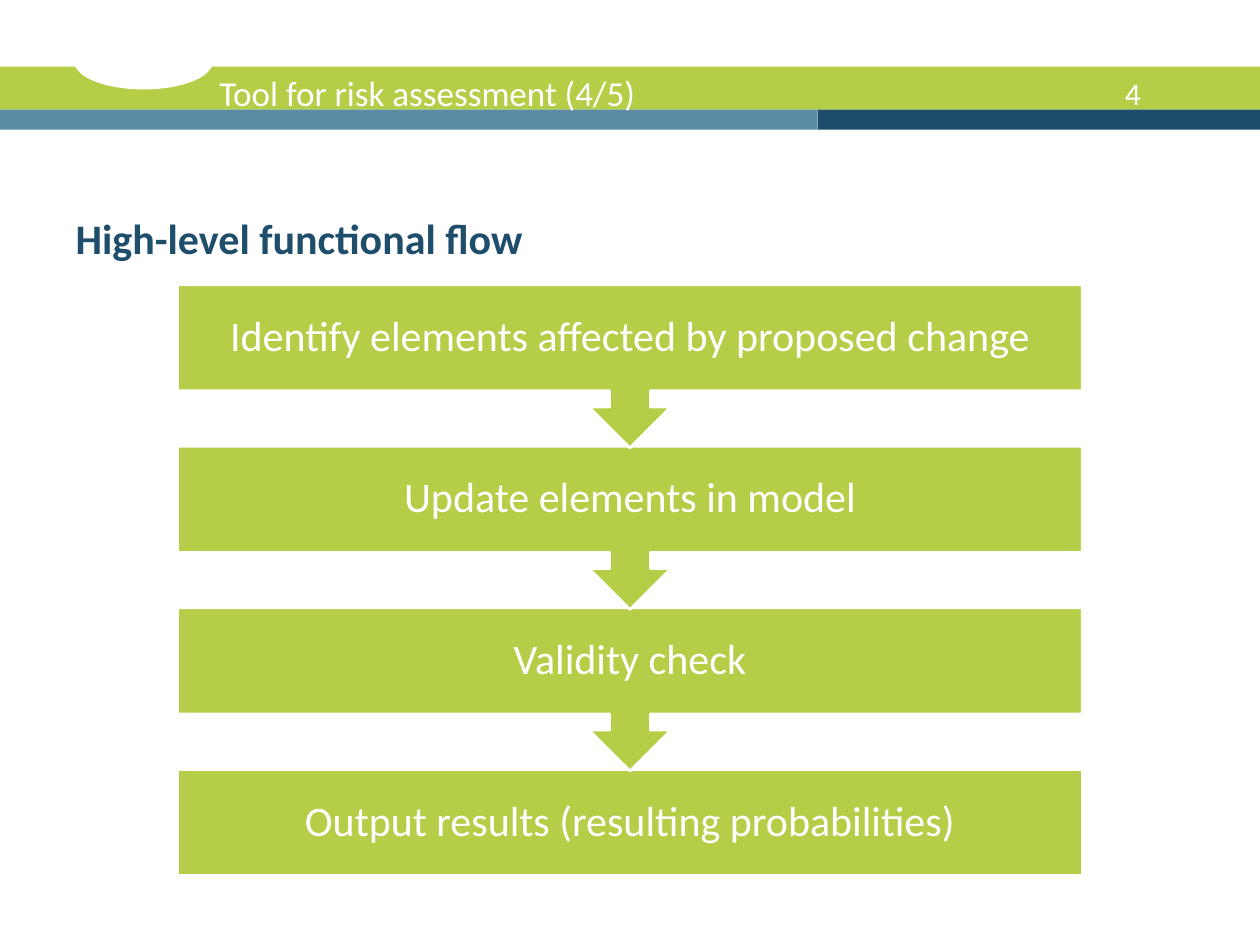
from lxml import etree
from pptx import Presentation
from pptx.dml.color import RGBColor
from pptx.enum.shapes import MSO_SHAPE
from pptx.enum.text import MSO_ANCHOR, MSO_AUTO_SIZE, PP_ALIGN
from pptx.oxml.ns import qn
from pptx.util import Inches, Pt

RECTANGLE = MSO_SHAPE.RECTANGLE
ELLIPSE = MSO_SHAPE.OVAL
CALLOUT = MSO_SHAPE.DOWN_ARROW_CALLOUT
LEFT, CENTER = PP_ALIGN.LEFT, PP_ALIGN.CENTER
TOP, MIDDLE, BOTTOM = MSO_ANCHOR.TOP, MSO_ANCHOR.MIDDLE, MSO_ANCHOR.BOTTOM
NO_AUTOFIT = MSO_AUTO_SIZE.NONE

COLORS = {"green": "B5CE48", "navy": "1E4E6B", "steel": "5B8AA5", "white": "FFFFFF"}
FONT = "Calibri"
SLIDE_WIDTH, SLIDE_HEIGHT = 10, 7.5
STEPS = [
    "Identify elements affected by proposed change",
    "Update elements in model",
    "Validity check",
    "Output results (resulting probabilities)",
]


def color(name):
    return RGBColor.from_string(COLORS[name])


def place(shape, box):
    shape.left, shape.top, shape.width, shape.height = map(Inches, box)


def write(shape, text, size=24, ink="white", bold=False, align=LEFT, anchor=TOP,
          line_spacing=1.0):
    frame = shape.text_frame
    frame.word_wrap = True
    frame.auto_size = NO_AUTOFIT
    frame.vertical_anchor = anchor
    frame.text = text
    paragraph = frame.paragraphs[0]
    paragraph.alignment = align
    paragraph.line_spacing = line_spacing
    paragraph.space_before = Pt(0)
    font = paragraph.runs[0].font
    font.name, font.size, font.bold = FONT, Pt(size), bold
    font.color.rgb = color(ink)
    return paragraph


def add_block(slide, kind, box, fill, outline=None):
    shape = slide.shapes.add_shape(kind, *map(Inches, box))
    shape.shadow.inherit = False
    shape.fill.solid()
    shape.fill.fore_color.rgb = color(fill)
    if outline:
        shape.line.color.rgb = color(outline)
        shape.line.width = Pt(1.5)
    else:
        shape.line.fill.background()
    return shape


def add_header(slide, box, title, number):
    left, top, width, height = box
    band = height * 0.68
    stripe_top, stripe = top + band, height - band
    split = width * 0.649
    add_block(slide, RECTANGLE, (left, top, width, band), "green")
    add_block(slide, RECTANGLE, (left + split, stripe_top, width - split, stripe), "navy")
    add_block(slide, RECTANGLE, (left, stripe_top, split, stripe), "steel")
    add_block(slide, ELLIPSE,
              (left + width * 0.059, top - height * 0.52, width * 0.11, height * 0.88), "white")
    number_box = (left + width * 0.883, top + height * 0.02, width * 0.083, height * 0.8)
    write(slide.shapes.add_textbox(*map(Inches, number_box)), number, size=18)
    heading = slide.shapes.title
    heading.element.getparent().append(heading.element)
    place(heading, (left + width * 0.164, top - height * 0.44, width * 0.687, height * 1.28))
    write(heading, title, size=20, anchor=BOTTOM)


def add_body(slide, box, text):
    body = slide.placeholders[1]
    place(body, box)
    paragraph = write(body, text, ink="navy", bold=True)
    properties = paragraph._p.get_or_add_pPr()
    properties.set("marL", "0")
    properties.set("indent", "0")
    etree.SubElement(properties, qn("a:buNone"))


def add_flow(slide, box, steps):
    left, top, width, height = box
    block = height * 0.18
    last = len(steps) - 1
    pitch = (height - block) / last
    for index, text in reversed(list(enumerate(steps))):
        kind, tall = (RECTANGLE, block) if index == last else (CALLOUT, pitch * 1.01)
        shape = add_block(slide, kind, (left, top + index * pitch, width, tall),
                          "green", outline="white")
        frame = shape.text_frame
        frame.margin_left = frame.margin_right = Inches(0.19)
        frame.margin_top = frame.margin_bottom = Inches(0.19)
        write(shape, text, align=CENTER, anchor=MIDDLE, line_spacing=0.9)


def main():
    presentation = Presentation()
    presentation.slide_width = Inches(SLIDE_WIDTH)
    presentation.slide_height = Inches(SLIDE_HEIGHT)
    slide = presentation.slides.add_slide(presentation.slide_layouts[1])
    add_header(slide, (0, 0.53, SLIDE_WIDTH, 0.5), "Tool for risk assessment (4/5)", "4")
    add_body(slide, (0.5, 1.64, SLIDE_WIDTH * 0.9, 5.04), "High-level functional flow")
    add_flow(slide, (1.41, 2.26, SLIDE_WIDTH * 0.718, 4.69), STEPS)
    presentation.save("out.pptx")


if __name__ == "__main__":
    main()
